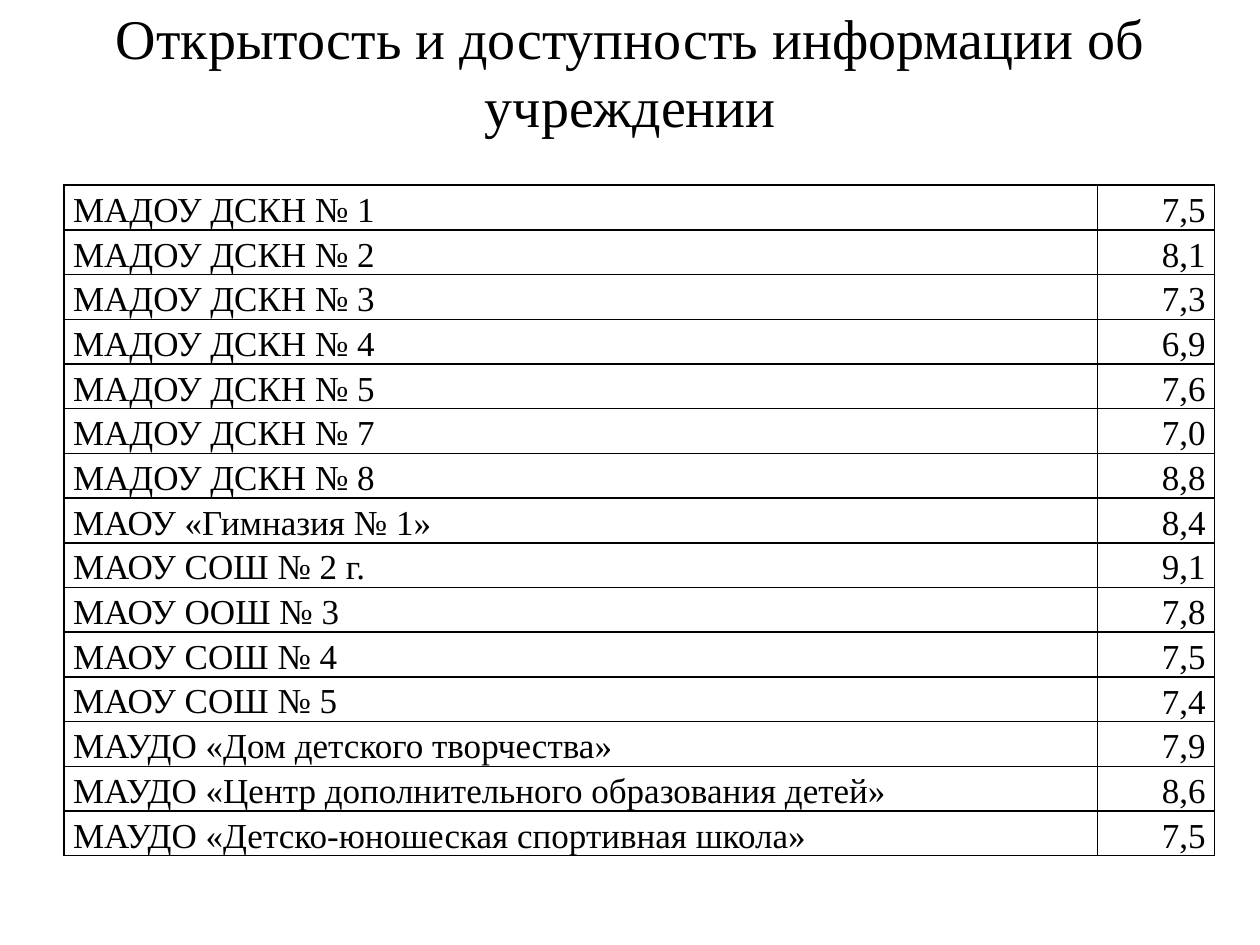
from lxml import etree
from pptx import Presentation, util as u
from pptx.dml.color import RGBColor
from pptx.enum import text as t
from pptx.oxml.ns import qn

INK = "000000"
ROWS = [
    ("МАДОУ ДСКН № 1", "7,5"),
    ("МАДОУ ДСКН № 2", "8,1"),
    ("МАДОУ ДСКН № 3", "7,3"),
    ("МАДОУ ДСКН № 4", "6,9"),
    ("МАДОУ ДСКН № 5", "7,6"),
    ("МАДОУ ДСКН № 7", "7,0"),
    ("МАДОУ ДСКН № 8", "8,8"),
    ("МАОУ «Гимназия № 1»", "8,4"),
    ("МАОУ СОШ № 2 г.", "9,1"),
    ("МАОУ ООШ № 3", "7,8"),
    ("МАОУ СОШ № 4", "7,5"),
    ("МАОУ СОШ № 5", "7,4"),
    ("МАУДО «Дом детского творчества»", "7,9"),
    ("МАУДО «Центр дополнительного образования детей»", "8,6"),
    ("МАУДО «Детско-юношеская спортивная школа»", "7,5"),
]


def write(frame, words, size=20, color=INK, align="LEFT", space=1.0):
    para = frame.paragraphs[0]
    para.alignment = getattr(t.PP_ALIGN, align)
    para.line_spacing = space
    run = para.add_run()
    run.text = words
    run.font.name = "Times New Roman"
    run.font.size = u.Pt(size)
    run.font.color.rgb = RGBColor.from_string(color)


def rule(cell, color=INK, width=1):
    props = cell._tc.get_or_add_tcPr()
    for side in ("lnL", "lnR", "lnT", "lnB"):
        line = etree.SubElement(props, qn(f"a:{side}"), w=str(u.Pt(width)))
        fill = etree.SubElement(line, qn("a:solidFill"))
        etree.SubElement(fill, qn("a:srgbClr"), val=color)


deck = Presentation()
deck.slide_width, deck.slide_height = u.Inches(10), u.Inches(7.5)
slide = deck.slides.add_slide(deck.slide_layouts[5])
left = u.Inches(0.51)

# Title
title = slide.shapes.title
title.left, title.top = left, u.Inches(0.14)
title.width, title.height = u.Inches(8.99), u.Inches(0.85)
frame = title.text_frame
frame.auto_size = t.MSO_AUTO_SIZE.NONE
frame.word_wrap = True
frame.vertical_anchor = t.MSO_ANCHOR.MIDDLE
write(frame, "Открытость и доступность информации об учреждении",
      size=32, align="CENTER")

# Table of scores: equal rows, wide name column
wide = [u.Inches(8.2), u.Inches(0.93)]
high = u.Inches(0.35)
table = slide.shapes.add_table(len(ROWS), 2, left, u.Inches(1.47),
                               sum(wide), high * len(ROWS)).table
table.first_row = table.horz_banding = False
for col, width in zip(table.columns, wide):
    col.width = width

looks = [("LEFT", t.MSO_ANCHOR.TOP), ("RIGHT", t.MSO_ANCHOR.BOTTOM)]
for r, row in enumerate(ROWS):
    table.rows[r].height = high
    for c, (words, (align, anchor)) in enumerate(zip(row, looks)):
        cell = table.cell(r, c)
        cell.margin_left = cell.margin_right = u.Inches(0.07)
        cell.margin_top = cell.margin_bottom = 0
        cell.vertical_anchor = anchor
        rule(cell)
        cell.fill.background()
        write(cell.text_frame, words, align=align, space=1.15)

deck.save("out.pptx")
